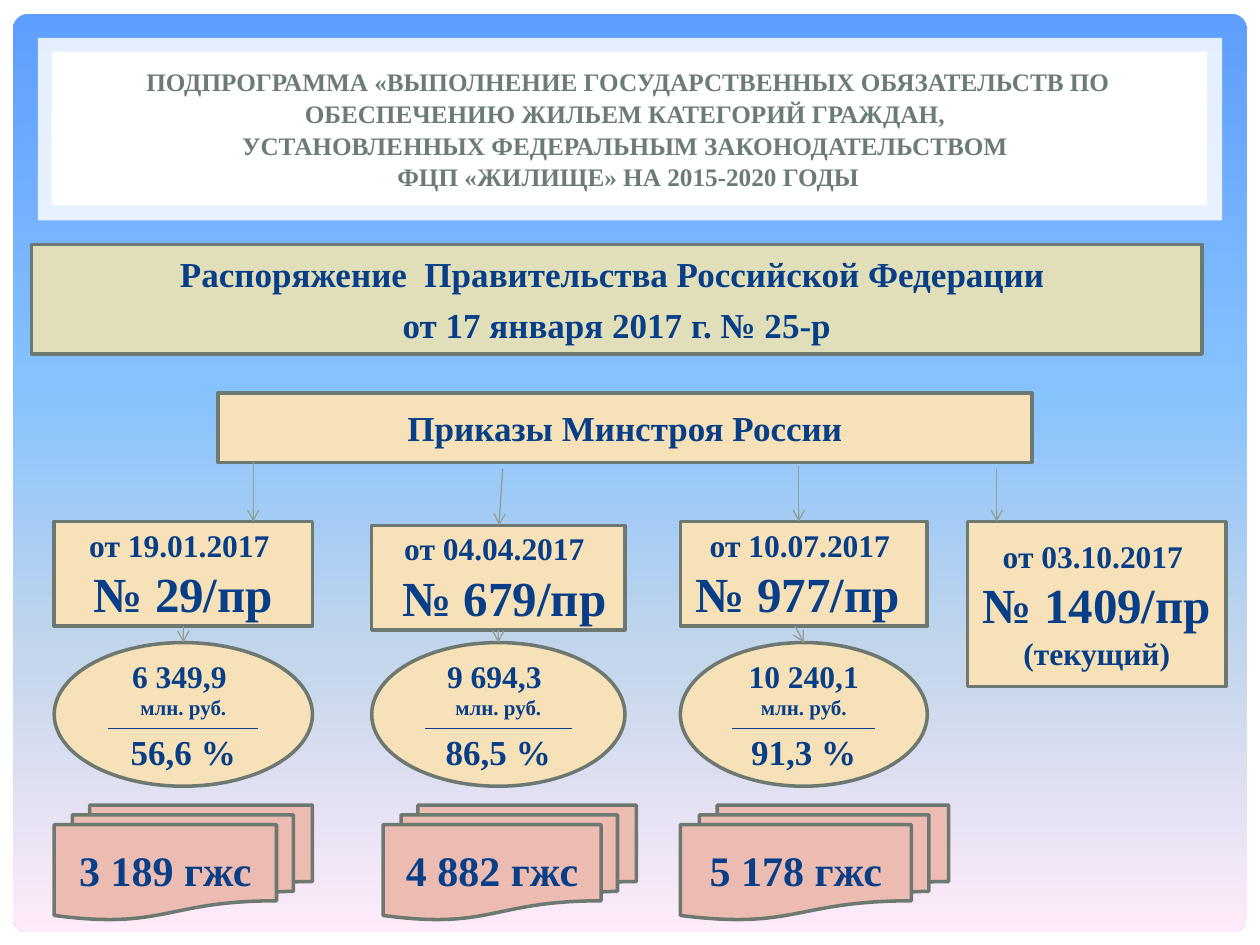
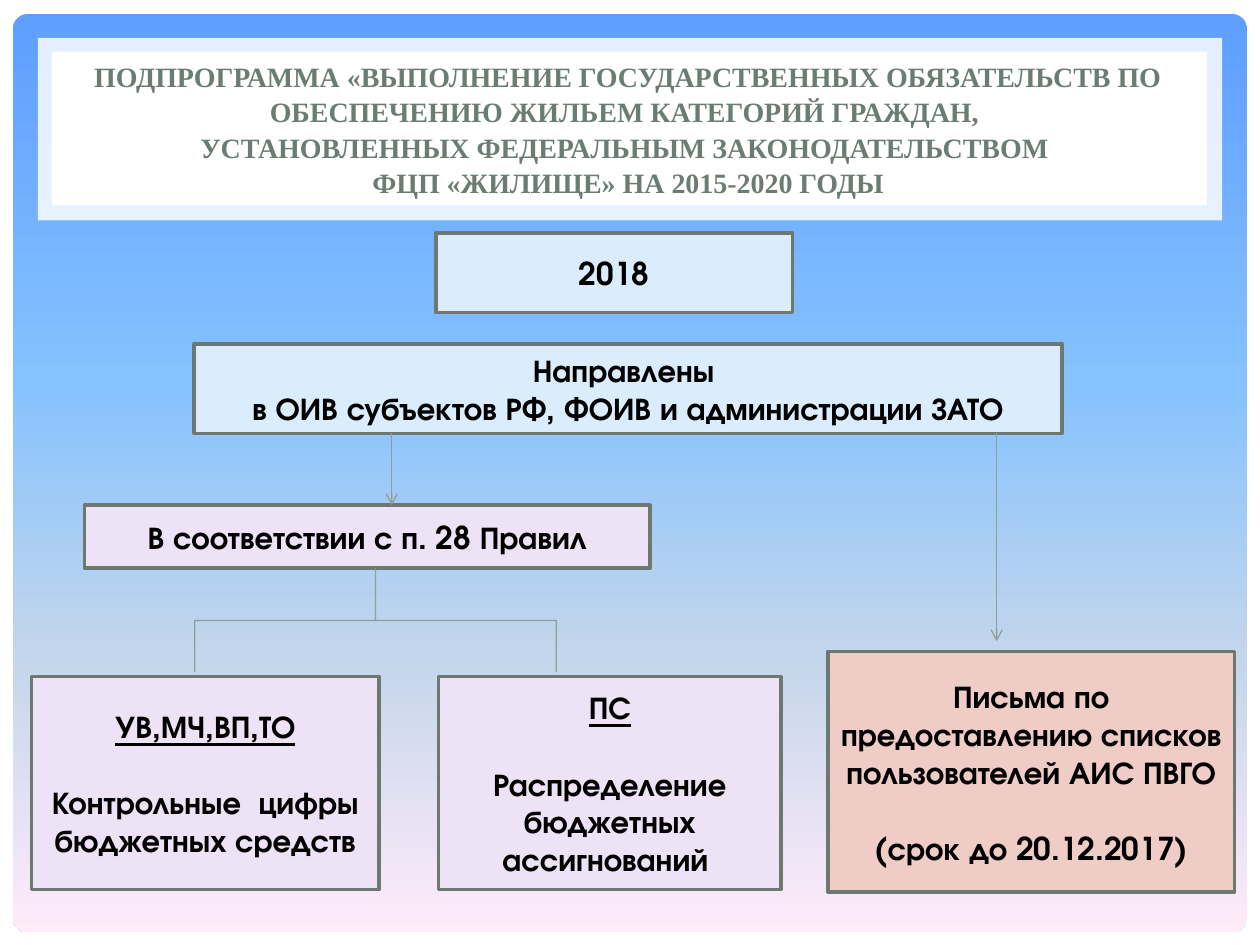
from dataclasses import dataclass

from lxml import etree
from pptx import Presentation
from pptx import util as u
from pptx.dml.color import RGBColor
from pptx.enum import shapes, text
from pptx.oxml.ns import qn

# Shared look
SERIF, SANS = "Times New Roman", "TeX Gyre Adventor"
NAVY, BLACK, TITLE_GREY = "073E87", "000000", "6B7D72"
BORDER, ARROW = "6D7871", "8F9F96"
OLIVE, SAND, ROSE = "E1DFBA", "F6E1B8", "ECBBB2"
ICE, LILAC, PINK = "DBEDFD", "EDE2F6", "F0CCC6"
SKY = ((0, "5E9EFF"), (40, "85C2FF"), (70, "C4D6EB"), (100, "FFEBFA"))
KIND = shapes.MSO_SHAPE
TITLE = (
    "ПОДПРОГРАММА «ВЫПОЛНЕНИЕ ГОСУДАРСТВЕННЫХ ОБЯЗАТЕЛЬСТВ ПО "
    "ОБЕСПЕЧЕНИЮ ЖИЛЬЕМ КАТЕГОРИЙ ГРАЖДАН, ",
    "УСТАНОВЛЕННЫХ ФЕДЕРАЛЬНЫМ ЗАКОНОДАТЕЛЬСТВОМ ",
    "ФЦП «ЖИЛИЩЕ» НА 2015-2020 ГОДЫ",
)


@dataclass
class Line:
    text: str
    size: float = 18
    before: float = 0
    underline: bool = False


@dataclass
class Box:
    left: float
    top: float
    width: float
    height: float
    fill: str
    lines: tuple[Line, ...] = ()
    kind: KIND = KIND.RECTANGLE
    border: str | None = BORDER


@dataclass
class Order:
    """One ministry order with its funding and certificates."""
    left: float
    width: float
    top: float
    date: str
    number: str
    amount: str
    share: str
    certificates: str
    cert_left: float
    cert_width: float
    arrow_from: float  # x of the arrow above, at its start
    arrow_to: float
    arrow_top: float
    link_shift: float = 0  # sideways start of the arrow to the oval

    @property
    def middle(self) -> float:
        return self.left + self.width / 2


def rgb(value: str) -> RGBColor:
    return RGBColor.from_string(value)


def apply(target, values: dict) -> None:
    for name, value in values.items():
        setattr(target, name, value)


def write(tf, lines: tuple[Line, ...], font: str, color: str, spacing: float = 1) -> None:
    apply(tf, dict(word_wrap=True, vertical_anchor=text.MSO_ANCHOR.MIDDLE,
                   margin_left=u.Inches(0.05), margin_right=u.Inches(0.05)))
    for i, line in enumerate(lines):
        p = tf.paragraphs[0] if i == 0 else tf.add_paragraph()
        apply(p, dict(alignment=text.PP_ALIGN.CENTER, line_spacing=spacing,
                      space_before=u.Pt(line.before)))
        r = p.add_run()
        r.text = line.text
        apply(r.font, dict(name=font, size=u.Pt(line.size), bold=True,
                           underline=line.underline))
        r.font.color.rgb = rgb(color)


def draw_box(s, box: Box, font: str = SERIF, color: str = NAVY):
    sp = s.shapes.add_shape(box.kind, *map(u.Inches, (box.left, box.top, box.width, box.height)))
    sp.shadow.inherit = False
    sp.fill.solid()
    sp.fill.fore_color.rgb = rgb(box.fill)
    if box.border:
        sp.line.color.rgb = rgb(box.border)
        sp.line.width = u.Pt(2)
    else:
        sp.line.fill.background()
    if box.lines:
        write(sp.text_frame, box.lines, font, color)
    return sp


def draw_line(s, x1: float, y1: float, x2: float, y2: float,
              color: str = ARROW, arrow: bool = True) -> None:
    cn = s.shapes.add_connector(shapes.MSO_CONNECTOR.STRAIGHT, *map(u.Inches, (x1, y1, x2, y2)))
    cn.line.color.rgb = rgb(color)
    cn.line.width = u.Pt(0.75)
    sp_pr = cn.element.spPr
    if arrow:
        etree.SubElement(sp_pr.find(qn("a:ln")), qn("a:tailEnd"), type="arrow")
    etree.SubElement(sp_pr, qn("a:effectLst"))


def fill_sky(sp) -> None:
    sp.fill.gradient()
    sp.fill.gradient_angle = 270
    stops = sp.element.spPr.find(qn("a:gradFill")).find(qn("a:gsLst"))
    for old in list(stops):
        stops.remove(old)
    for percent, color in SKY:
        gs = etree.SubElement(stops, qn("a:gs"), pos=str(percent * 1000))
        etree.SubElement(gs, qn("a:srgbClr"), val=color)


def add_slide(prs, title_size: float):
    """Blank slide with the sky panel, title band and title."""
    s = prs.slides.add_slide(prs.slide_layouts[6])
    s.background.fill.solid()
    s.background.fill.fore_color.rgb = rgb("FFFFFF")
    panel = draw_box(s, Box(0.1, 0.11, 9.8, 7.29, "FFFFFF", kind=KIND.ROUNDED_RECTANGLE, border=None))
    panel.adjustments[0] = 0.017
    fill_sky(panel)
    band = draw_box(s, Box(0.3, 0.3, 9.4, 1.45, "FFFFFF", border=None))
    tint = band.element.spPr.find(qn("a:solidFill"))[0]
    etree.SubElement(tint, qn("a:alpha"), val="83000")
    draw_box(s, Box(0.41, 0.41, 9.17, 1.22, "FFFFFF", border=None))
    title = s.shapes.add_textbox(*map(u.Inches, (0.47, 0.45, 9.03, 1.14)))
    write(title.text_frame, tuple(Line(t, title_size) for t in TITLE), SERIF, TITLE_GREY, 1.05)
    return s


ORDERS = (
    Order(0.43, 2.05, 4.14, "от 19.01.2017 ", "№ 29/пр", "6 349,9 ", "56,6 %",
          "3 189 гжс", 0.43, 2.05, 2.01, 2.01, 3.67),
    Order(2.95, 2.01, 4.17, "от 04.04.2017 ", " № 679/пр", "9 694,3 ", "86,5 %",
          "4 882 гжс", 3.04, 2.01, 3.99, 3.96, 3.72),
    Order(5.4, 1.96, 4.14, "от 10.07.2017 ", "№ 977/пр ", "10 240,1", "91,3 %",
          "5 178 гжс", 5.4, 2.13, 6.34, 6.34, 3.7, -0.07),
)


def draw_order(s, order: Order) -> None:
    order_bottom, oval_top, oval_bottom = order.top + 0.83, 5.1, 6.24
    draw_box(s, Box(order.left, order.top, order.width, 0.83, SAND,
                    (Line(order.date), Line(order.number, 28))))
    draw_box(s, Box(order.left, oval_top, order.width, oval_bottom - oval_top, SAND,
                    (Line(order.amount), Line("млн. руб.", 12), Line(order.share, 20, 6)),
                    KIND.OVAL))
    # Rule between the amount and the share
    half = order.width * 0.29
    draw_line(s, order.middle - half, 5.78, order.middle + half, 5.78, NAVY, arrow=False)
    draw_box(s, Box(order.cert_left, 6.39, order.cert_width, 0.91, ROSE,
                    (Line(order.certificates, 24),), KIND.FLOWCHART_MULTIDOCUMENT))
    draw_line(s, order.arrow_from, order.arrow_top, order.arrow_to, order.top)
    draw_line(s, order.middle + order.link_shift, order_bottom, order.middle, oval_top)


def orders_slide(prs) -> None:
    s = add_slide(prs, 14.4)
    draw_box(s, Box(0.25, 1.94, 9.29, 0.87, OLIVE, (
        Line("Распоряжение  Правительства Российской Федерации ", 20, 5),
        Line("от 17 января 2017 г. № 25-р", 20, 5))))
    draw_box(s, Box(1.73, 3.12, 6.46, 0.55, SAND, (Line("Приказы Минстроя России", 20),)))
    for order in ORDERS:
        draw_order(s, order)
    # Current order
    draw_box(s, Box(7.68, 4.14, 2.05, 1.31, SAND, (
        Line("от 03.10.2017 "), Line("№ 1409/пр", 28), Line("(текущий)"))))
    draw_line(s, 7.91, 3.72, 7.91, 4.14)


PLAN_BOXES = (
    Box(3.46, 1.85, 2.83, 0.63, ICE, (Line("2018"),)),
    Box(1.54, 2.73, 6.89, 0.71, ICE, (
        Line("Направлены "), Line("в ОИВ субъектов РФ, ФОИВ и администрации ЗАТО"))),
    Box(0.67, 4.01, 4.49, 0.5, LILAC, (Line("В соответствии с п. 28 Правил"),)),
    Box(0.25, 5.37, 2.76, 1.69, LILAC, (
        Line("УВ,МЧ,ВП,ТО", underline=True),
        Line("Контрольные  цифры бюджетных средств", before=22))),
    Box(3.48, 5.37, 2.72, 1.69, LILAC, (
        Line("ПС", underline=True),
        Line("Распределение бюджетных ассигнований ", before=22))),
    Box(6.57, 5.17, 3.23, 1.91, PINK, (
        Line("Письма по предоставлению списков пользователей АИС ПВГО"),
        Line("(срок до 20.12.2017)", before=22))),
)


def plan_slide(prs) -> None:
    s = add_slide(prs, 16)
    for box in PLAN_BOXES:
        draw_box(s, box, SANS, BLACK)
    # Square bracket that splits the rule into two branches
    brace = draw_box(s, Box(2.57, 3.49, 0.82, 2.87, "FFFFFF", kind=KIND.LEFT_BRACE, border=ARROW))
    brace.fill.background()
    brace.line.width = u.Pt(0.75)
    brace.rotation = 90
    brace.adjustments[0] = 0
    for x, bottom in ((7.91, 5.09), (3.11, 4.01)):
        draw_line(s, x, 3.44, x, bottom)


def main() -> None:
    prs = Presentation()
    apply(prs, dict(slide_width=u.Inches(10), slide_height=u.Inches(7.5)))
    orders_slide(prs)
    plan_slide(prs)
    prs.save("out.pptx")


if __name__ == "__main__":
    main()
